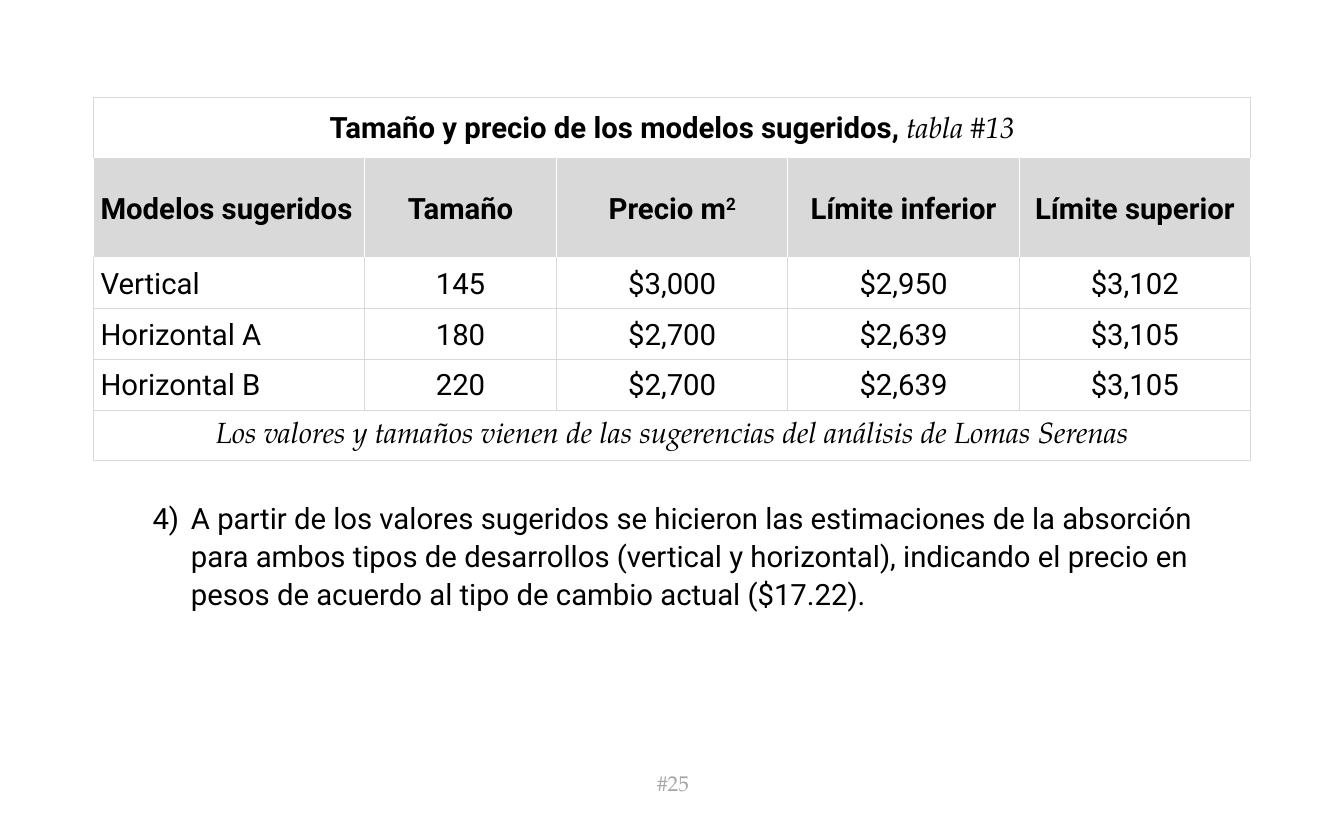
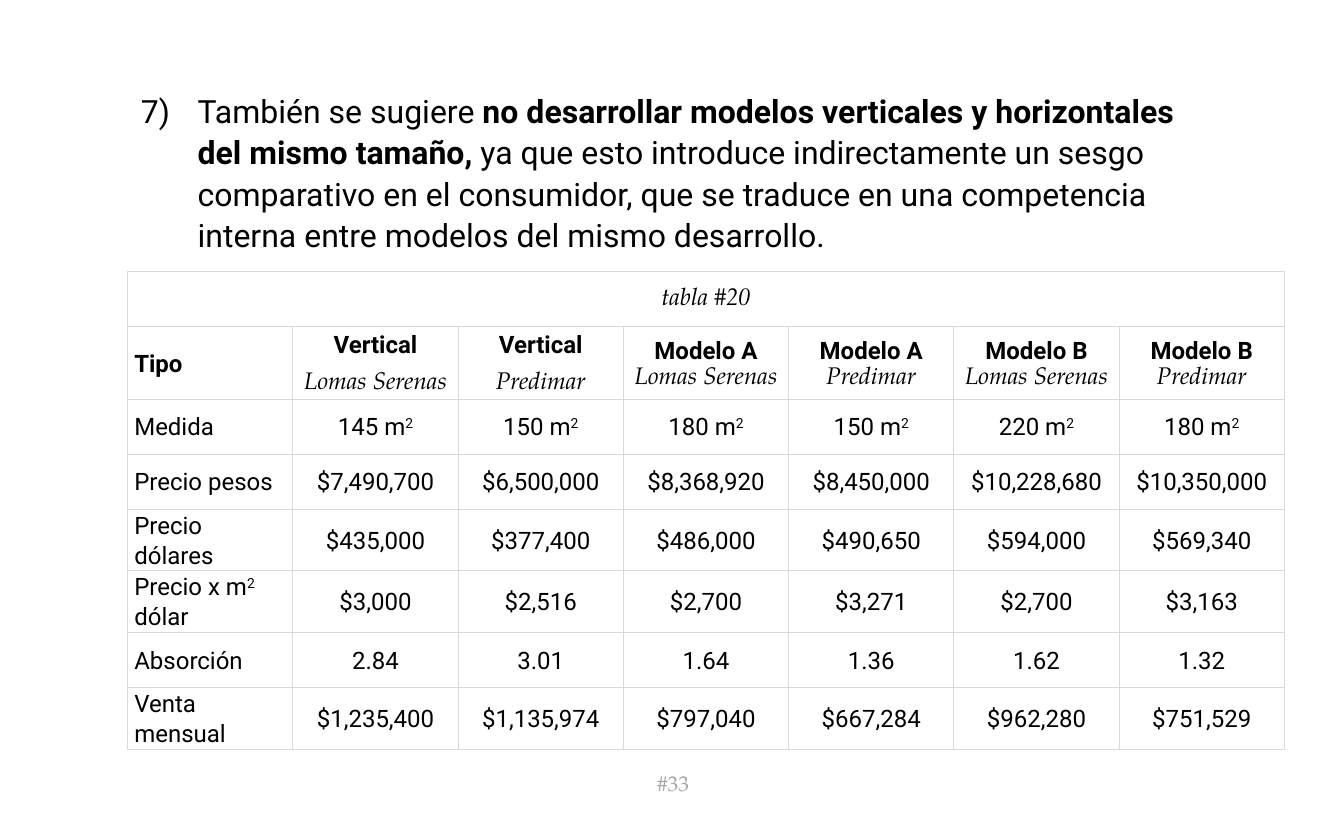
from lxml.etree import SubElement
from pptx import Presentation
from pptx.dml.color import RGBColor
from pptx.enum.text import MSO_ANCHOR as Anchor, MSO_AUTO_SIZE as AutoSize, PP_ALIGN as Align
from pptx.oxml.ns import qn
from pptx.util import Pt

SANS = "Roboto"
SERIF = "TeX Gyre Pagella"
BLACK = "000000"
WHITE = "FFFFFF"
GRID = "D9D9D9"
FOOTER = "A6A6A6"
BOLD, ITALIC, SUPER = "b", "i", "^"
LINE_SPACING = 1.07
SPACE_AFTER = 8
CELL_MARGIN = 5
ADVISER = "Lomas Serenas"
COMPETITOR = "Predimar"


def rgb(hex_color):
    return RGBColor.from_string(hex_color)


def plain(text, style=""):
    return [[(text, style)]]


def squared(text, style="", rest=""):
    runs = [(text, style), ("2", style + SUPER)]
    return [runs + ([(rest, style)] if rest else [])]


def plain_row(*texts, style=""):
    return [plain(text, style) for text in texts]


def write_runs(paragraph, runs, size, color=BLACK):
    for text, style in runs:
        run = paragraph.add_run()
        run.text = text
        font = run.font
        font.size = Pt(size)
        font.name = SERIF if ITALIC in style else SANS
        font.bold = BOLD in style
        font.italic = ITALIC in style
        font.color.rgb = rgb(color)
        if SUPER in style:
            run._r.get_or_add_rPr().set("baseline", "30000")


def add_text_frame(slide, box, margins):
    frame = slide.shapes.add_textbox(*map(Pt, box)).text_frame
    frame.word_wrap = True
    frame.margin_left, frame.margin_top, frame.margin_right, frame.margin_bottom = map(Pt, margins)
    return frame


def add_page_number(slide, number):
    frame = add_text_frame(slide, (468.72, 578.88, 70.56, 18.72), (8.5, 1.5, 7, 3.5))
    frame.vertical_anchor = Anchor.MIDDLE
    paragraph = frame.paragraphs[0]
    paragraph.text = f"#{number}"
    paragraph.alignment = Align.CENTER
    font = paragraph.runs[0].font
    font.size = Pt(16)
    font.name = SERIF
    font.color.rgb = rgb(FOOTER)


def add_numbered_point(slide, box, runs, size, indent, space_after=0):
    frame = add_text_frame(slide, box, (10, 5, 10, 5))
    frame.auto_size = AutoSize.SHAPE_TO_FIT_TEXT
    paragraph = frame.paragraphs[0]
    paragraph.line_spacing = LINE_SPACING
    paragraph.space_after = Pt(space_after)
    properties = paragraph._p.get_or_add_pPr()
    properties.set("marL", str(Pt(indent)))
    properties.set("indent", str(-Pt(indent)))
    write_runs(paragraph, runs, size)


def set_borders(cell, left=GRID, right=GRID, top=GRID, bottom=GRID):
    properties = cell._tc.get_or_add_tcPr()
    edges = zip(("a:lnL", "a:lnR", "a:lnT", "a:lnB"), (left, right, top, bottom))
    for position, (tag, color) in enumerate(edges):
        line = SubElement(properties, qn(tag), w=str(Pt(1)))
        fill = SubElement(line, qn("a:solidFill"))
        SubElement(fill, qn("a:srgbClr"), val=color)
        properties.insert(position, line)


def fill_cell(cell, content, size, alignment):
    cell.vertical_anchor = Anchor.MIDDLE
    cell.margin_left = cell.margin_right = Pt(CELL_MARGIN)
    cell.margin_top = cell.margin_bottom = 0
    frame = cell.text_frame
    for index, runs in enumerate(content):
        paragraph = frame.add_paragraph() if index else frame.paragraphs[0]
        paragraph.alignment = alignment
        paragraph.line_spacing = LINE_SPACING
        paragraph.space_after = Pt(SPACE_AFTER)
        write_runs(paragraph, runs, size)


def add_grid(slide, left, top, widths, heights, rows, size):
    frame = slide.shapes.add_table(
        len(rows), len(widths), Pt(left), Pt(top), Pt(sum(widths)), Pt(sum(heights)))
    table = frame.table
    table.first_row = table.horz_banding = False
    for column, width in zip(table.columns, widths):
        column.width = Pt(width)
    for row, height in zip(table.rows, heights):
        row.height = Pt(height)
    for cell in table.iter_cells():
        cell.fill.background()
        set_borders(cell)
    for r, contents in enumerate(rows):
        spans = len(contents) == 1
        if spans:
            table.cell(r, 0).merge(table.cell(r, len(widths) - 1))
        for c, content in enumerate(contents):
            alignment = Align.CENTER if spans or c else Align.LEFT
            fill_cell(table.cell(r, c), content, size, alignment)
    return table


def restyle_borders(cell, **edges):
    properties = cell._tc.get_or_add_tcPr()
    for tag in ("a:lnL", "a:lnR", "a:lnT", "a:lnB"):
        properties.remove(properties.find(qn(tag)))
    set_borders(cell, **edges)


def shade_header(table, row):
    for column in range(len(table.columns)):
        header = table.cell(row, column)
        header.fill.solid()
        header.fill.fore_color.rgb = rgb(GRID)
        restyle_borders(header, left=WHITE, right=WHITE, bottom=WHITE)
        restyle_borders(table.cell(row + 1, column), top=WHITE)


def build_suggested_models(slide):
    add_page_number(slide, 25)
    add_numbered_point(
        slide, (104.4, 368.64, 833.76, 123.12),
        [("4)\tA partir de los valores sugeridos se hicieron las estimaciones de la absorción "
          "para ambos tipos de desarrollos (vertical y horizontal), indicando el precio en "
          "pesos de acuerdo al tipo de cambio actual ($17.22).", "")],
        size=22, indent=28.8)
    headings = plain_row("Modelos sugeridos", "Tamaño", "Límite inferior", "Límite superior",
                         style=BOLD)
    headings.insert(2, squared("Precio m", BOLD))
    rows = [
        [[[("Tamaño y precio de los modelos sugeridos, ", BOLD), ("tabla #13", ITALIC)]]],
        headings,
        plain_row("Vertical", "145", "$3,000", "$2,950", "$3,102"),
        plain_row("Horizontal A", "180", "$2,700", "$2,639", "$3,105"),
        plain_row("Horizontal B", "220", "$2,700", "$2,639", "$3,105"),
        plain_row("Los valores y tamaños vienen de las sugerencias del análisis de " + ADVISER,
                  style=ITALIC),
    ]
    table = add_grid(slide, 70.4, 73.4, [203, 144] + [173.5] * 3,
                     [45.2, 74.7] + [38.1] * 4, rows, size=22)
    shade_header(table, 1)


def build_comparison(slide):
    add_page_number(slide, 33)
    add_numbered_point(
        slide, (95.76, 61.92, 828, 133.2),
        [("7)\tTambién se sugiere ", ""),
         ("no desarrollar modelos verticales y horizontales del mismo tamaño,", BOLD),
         (" ya que esto introduce indirectamente un sesgo comparativo en el consumidor, "
          "que se traduce en una competencia interna entre modelos del mismo desarrollo.", "")],
        size=24, indent=42.5, space_after=SPACE_AFTER)
    firms = (ADVISER, COMPETITOR)
    verticals = [[[("Vertical", BOLD)], [(firm, ITALIC)]] for firm in firms]
    models = [[[(f"Modelo {model} ", BOLD), (firm, ITALIC)]] for model in "AB" for firm in firms]
    sizes = (145, 150, 180, 150, 220, 180)
    rows = [
        plain_row("tabla #20", style=ITALIC),
        plain_row("Tipo", style=BOLD) + verticals + models,
        plain_row("Medida") + [squared(f"{area} m") for area in sizes],
        plain_row("Precio pesos", "$7,490,700", "$6,500,000", "$8,368,920", "$8,450,000",
                  "$10,228,680", "$10,350,000"),
        plain_row("Precio dólares", "$435,000", "$377,400", "$486,000", "$490,650",
                  "$594,000", "$569,340"),
        [squared("Precio x m", rest=" dólar")]
        + plain_row("$3,000", "$2,516", "$2,700", "$3,271", "$2,700", "$3,163"),
        plain_row("Absorción", "2.84", "3.01", "1.64", "1.36", "1.62", "1.32"),
        plain_row("Venta mensual", "$1,235,400", "$1,135,974", "$797,040", "$667,284",
                  "$962,280", "$751,529"),
    ]
    add_grid(slide, 95.76, 203.8, [123.94] * 7, [41.3, 53.6] + [41.3] * 5 + [44.6],
             rows, size=18)


def main():
    presentation = Presentation()
    presentation.slide_width = Pt(1008)
    presentation.slide_height = Pt(612)
    blank = presentation.slide_layouts[6]
    for build in (build_suggested_models, build_comparison):
        build(presentation.slides.add_slide(blank))
    presentation.save("out.pptx")


if __name__ == "__main__":
    main()
